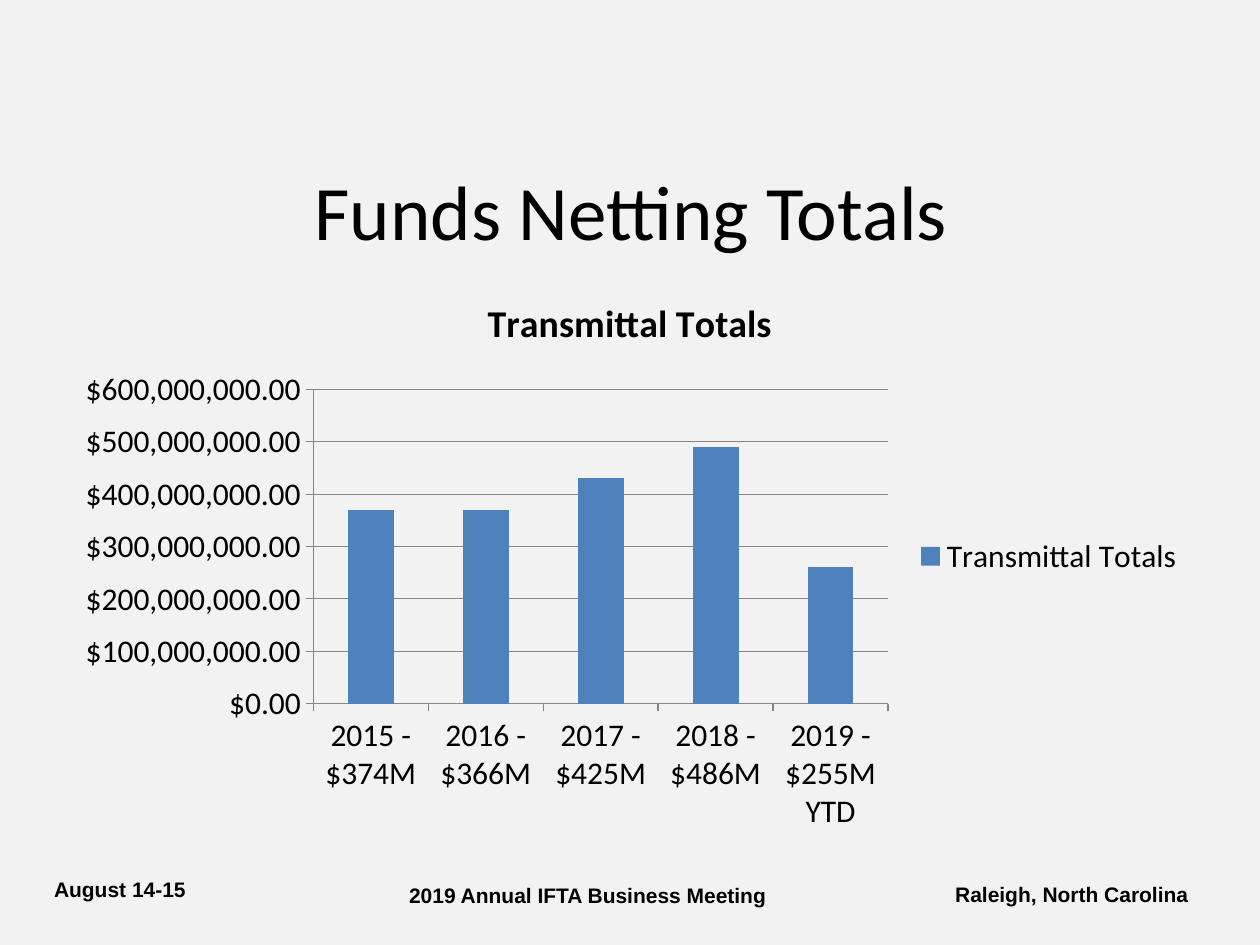
from dataclasses import dataclass

from pptx import Presentation
from pptx.chart.data import CategoryChartData
from pptx.dml.color import RGBColor
from pptx.enum.chart import XL_CHART_TYPE, XL_LEGEND_POSITION, XL_TICK_MARK
from pptx.enum.text import MSO_ANCHOR, PP_ALIGN
from pptx.slide import Slide
from pptx.util import Cm, Pt

BLACK = "000000"
GRAY = "868686"
BLUE = "4F81BD"
BACKGROUND = "F2F2F2"
SERIES_NAME = "Transmittal Totals"
TOTALS = {
    "2015 - $374M": 370_000_000,
    "2016 - $366M": 370_000_000,
    "2017 - $425M": 430_000_000,
    "2018 - $486M": 490_000_000,
    "2019 - $255M YTD": 260_000_000,
}


@dataclass
class Label:
    text: str
    left: float
    top: float
    width: float
    height: float
    align: PP_ALIGN
    anchor: MSO_ANCHOR = MSO_ANCHOR.MIDDLE
    font: str = "Arial"
    size: int = 12
    bold: bool = True


LABELS = [
    Label("2019 Annual IFTA Business Meeting", 7.62, 17.66, 8.46, 0.76,
          PP_ALIGN.CENTER, MSO_ANCHOR.TOP),
    Label("August 14-15", 0.84, 17.41, 5.92, 1.02, PP_ALIGN.LEFT),
    Label("Raleigh, North Carolina", 18.29, 17.51, 5.92, 1.02, PP_ALIGN.RIGHT),
    Label("Funds Netting Totals ", 1.47, 3.17, 22.86, 2.34, PP_ALIGN.CENTER,
          MSO_ANCHOR.TOP, "Calibri", 44, False),
]


def paint(color_format, hex_color: str) -> None:
    color_format.rgb = RGBColor.from_string(hex_color)


def style_font(font, name: str, size: float, bold: bool) -> None:
    font.name = name
    font.size = Pt(size)
    font.bold = bold
    paint(font.color, BLACK)


def add_label(s: Slide, label: Label) -> None:
    sp = s.shapes.add_textbox(Cm(label.left), Cm(label.top),
                              Cm(label.width), Cm(label.height))
    tf = sp.text_frame
    tf.word_wrap = True
    tf.vertical_anchor = label.anchor
    tf.text = label.text
    p = tf.paragraphs[0]
    p.alignment = label.align
    style_font(p.runs[0].font, label.font, label.size, label.bold)


def style_axis(axis) -> None:
    axis.major_tick_mark = XL_TICK_MARK.OUTSIDE
    axis.minor_tick_mark = XL_TICK_MARK.NONE
    paint(axis.format.line.color, GRAY)
    axis.format.line.width = Pt(0.75)


def add_totals_chart(s: Slide) -> None:
    data = CategoryChartData()
    data.categories = list(TOTALS)
    data.add_series(SERIES_NAME, list(TOTALS.values()))
    chart = s.shapes.add_chart(XL_CHART_TYPE.COLUMN_CLUSTERED, Cm(1.27), Cm(5.46),
                               Cm(22.86), Cm(11.51), data).chart
    style_font(chart.font, "Calibri", 18, False)

    chart.has_title = True
    tf = chart.chart_title.text_frame
    tf.text = SERIES_NAME
    style_font(tf.paragraphs[0].runs[0].font, "Calibri", 21.6, True)
    chart.chart_title.include_in_layout = False

    chart.has_legend = True
    chart.legend.position = XL_LEGEND_POSITION.RIGHT
    chart.legend.include_in_layout = False

    style_axis(chart.category_axis)
    values = chart.value_axis
    style_axis(values)
    values.minimum_scale = 0
    values.maximum_scale = 600_000_000
    values.major_unit = 100_000_000
    values.tick_labels.number_format = '"$"#,##0.00'
    values.tick_labels.number_format_is_linked = False
    values.has_major_gridlines = True
    paint(values.major_gridlines.format.line.color, GRAY)
    values.major_gridlines.format.line.width = Pt(0.75)

    plot = chart.plots[0]
    plot.gap_width = 150
    plot.vary_by_categories = False
    fill = plot.series[0].format.fill
    fill.solid()
    paint(fill.fore_color, BLUE)


def main() -> None:
    prs = Presentation()
    prs.slide_width = Cm(25.4)
    prs.slide_height = Cm(19.05)
    s = prs.slides.add_slide(prs.slide_layouts[6])
    s.background.fill.solid()
    paint(s.background.fill.fore_color, BACKGROUND)
    add_totals_chart(s)
    for label in LABELS:
        add_label(s, label)
    prs.save("out.pptx")


if __name__ == "__main__":
    main()
